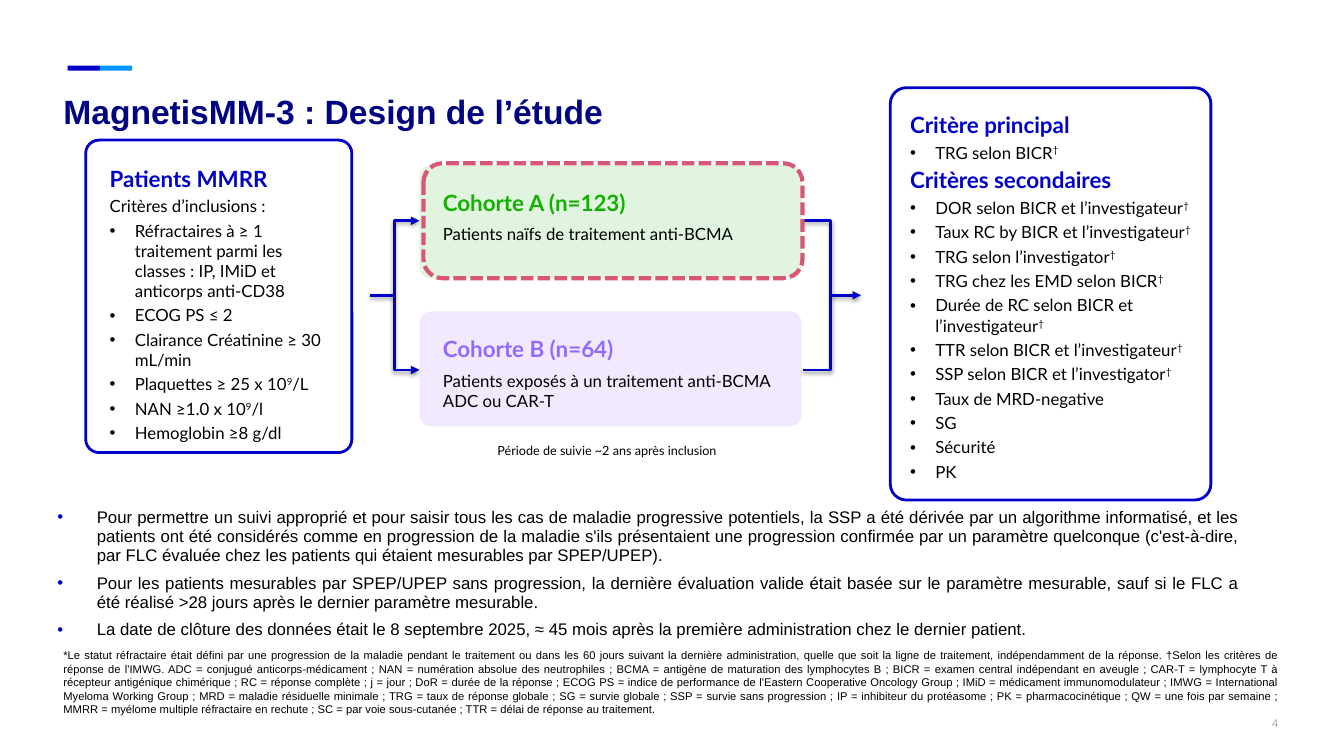
from lxml.etree import SubElement
from pptx import Presentation
from pptx.dml.color import RGBColor
from pptx.enum.dml import MSO_LINE
from pptx.enum.shapes import MSO_CONNECTOR, MSO_SHAPE
from pptx.enum.text import MSO_ANCHOR, PP_ALIGN
from pptx.oxml.ns import qn
from pptx.util import Inches, Pt

BLUE = RGBColor(0x00, 0x00, 0xC9)
SKY = RGBColor(0x00, 0x95, 0xFF)
NAVY = RGBColor(0x00, 0x04, 0x83)
GREY = RGBColor(0xA1, 0xAA, 0xB1)
BLACK = RGBColor(0x00, 0x00, 0x00)
WHITE = RGBColor(0xFF, 0xFF, 0xFF)
GREEN = RGBColor(0x12, 0xB0, 0x00)
MINT = RGBColor(0xE1, 0xF4, 0xDF)
VIOLET = RGBColor(0x93, 0x69, 0xFF)
LILAC = RGBColor(0xF3, 0xE9, 0xFF)
ROSE = RGBColor(0xD9, 0x57, 0x76)

PATIENTS = [
    "Réfractaires à ≥ 1 traitement parmi les classes : IP, IMiD et anticorps anti-CD38",
    "ECOG PS ≤ 2",
    "Clairance Créatinine ≥ 30 mL/min",
    "Plaquettes ≥ 25 x 10^9^/L",
    "NAN ≥1.0 x 10^9^/l",
    "Hemoglobin ≥8 g/dl",
]
SECOND = [
    "DOR selon BICR et l’investigateur^†",
    "Taux RC by BICR et l’investigateur^†",
    "TRG selon l’investigator^†",
    "TRG chez les EMD selon BICR^†",
    "Durée de RC selon BICR et l’investigateur^†",
    "TTR selon BICR et l’investigateur^†",
    "SSP selon BICR et l’investigator^†",
    "Taux de MRD-negative",
    "SG",
    "Sécurité",
    "PK",
]
NOTES = [
    "Pour permettre un suivi approprié et pour saisir tous les cas de maladie progressive potentiels, la SSP a été dérivée par un algorithme informatisé, et les patients ont été considérés comme en progression de la maladie s'ils présentaient une progression confirmée par un paramètre quelconque (c'est-à-dire, par FLC évaluée chez les patients qui étaient mesurables par SPEP/UPEP).",
    "Pour les patients mesurables par SPEP/UPEP sans progression, la dernière évaluation valide était basée sur le paramètre mesurable, sauf si le FLC a été réalisé >28 jours après le dernier paramètre mesurable.",
    "La date de clôture des données était le 8 septembre 2025, ≈ 45 mois après la première administration chez le dernier patient.",
]
STATUS = "*Le statut réfractaire était défini par une progression de la maladie pendant le traitement ou dans les 60 jours suivant la dernière administration, quelle que soit la ligne de traitement, indépendamment de la réponse. †Selon les critères de réponse de l'IMWG."
TERMS = [
    "ADC = conjugué anticorps-médicament",
    "NAN = numération absolue des neutrophiles",
    "BCMA = antigène de maturation des lymphocytes B",
    "BICR = examen central indépendant en aveugle",
    "CAR-T = lymphocyte T à récepteur antigénique chimérique",
    "RC = réponse complète",
    "j = jour",
    "DoR = durée de la réponse",
    "ECOG PS = indice de performance de l'Eastern Cooperative Oncology Group",
    "IMiD = médicament immunomodulateur",
    "IMWG = International Myeloma Working Group",
    "MRD = maladie résiduelle minimale",
    "TRG = taux de réponse globale",
    "SG = survie globale",
    "SSP = survie sans progression",
    "IP = inhibiteur du protéasome",
    "PK = pharmacocinétique",
    "QW = une fois par semaine",
    "MMRR = myélome multiple réfractaire en rechute",
    "SC = par voie sous-cutanée",
    "TTR = délai de réponse au traitement.",
]


def setup(shape, pads, anchor=MSO_ANCHOR.TOP):
    frame = shape.text_frame
    frame.word_wrap = True
    frame.vertical_anchor = anchor
    (frame.margin_left, frame.margin_top,
     frame.margin_right, frame.margin_bottom) = map(Inches, pads)
    return frame


def write(frame, text, size, color=BLACK, font="Lato", bold=False,
          align=PP_ALIGN.LEFT, after=0, indent=0, dot=None):
    para = frame.paragraphs[0]
    if para.runs:
        para = frame.add_paragraph()
    para.alignment = align
    para.space_after = Pt(after)
    if indent:
        props = para._p.get_or_add_pPr()
        props.set("marL", str(Inches(indent)))
        props.set("indent", str(-Inches(indent)))
        if dot:
            tint = SubElement(props, qn("a:buClr"))
            SubElement(tint, qn("a:srgbClr"), val=str(dot))
        SubElement(props, qn("a:buFont"), typeface="Arial")
        SubElement(props, qn("a:buChar"), char="•")
    para.font.name = font
    para.font.size = Pt(size)
    para.font.bold = bold
    para.font.color.rgb = color
    for i, part in enumerate(text.split("^")):
        if part:
            run = para.add_run()
            run.text = part
            if i % 2:
                run._r.get_or_add_rPr().set("baseline", "30000")
    return para


def label(slide, box, text, size, pads=(0.1, 0.05, 0.1, 0.05),
          anchor=MSO_ANCHOR.TOP, **style):
    shape = slide.shapes.add_textbox(*map(Inches, box))
    write(setup(shape, pads, anchor), text, size, **style)


def block(slide, kind, box, fill=None, line=None, width=2, round=None):
    shape = slide.shapes.add_shape(kind, *map(Inches, box))
    shape.shadow.inherit = False
    if round is not None:
        shape.adjustments[0] = round
    if fill is None:
        shape.fill.background()
    else:
        shape.fill.solid()
        shape.fill.fore_color.rgb = fill
    if line is None:
        shape.line.fill.background()
    else:
        shape.line.color.rgb = line
        shape.line.width = Pt(width)
    return shape


def header(slide, box):
    x, y, w, h = box
    for i, color in enumerate((BLUE, SKY)):
        block(slide, MSO_SHAPE.RECTANGLE,
              (x + 0.14 + i * 0.32, y, 0.32, 0.05), color)
    label(slide, (x, y + 0.15, w, h - 0.15), "MagnetisMM-3 : Design de l’étude",
          24, (0.1,) * 4, color=NAVY, font="Arial", bold=True)


def panel(slide, box, pads, rows):
    shape = block(slide, MSO_SHAPE.ROUNDED_RECTANGLE, box, WHITE, BLUE, round=0.05)
    tint = shape._element.spPr.find(qn("a:solidFill"))[0]
    SubElement(tint, qn("a:alpha"), val="10000")
    frame = setup(shape, pads, MSO_ANCHOR.MIDDLE)
    for kind, text in rows:
        if kind == "head":
            write(frame, text, 16, BLUE, bold=True, after=3)
        else:
            write(frame, text, 12, after=3, indent=0.25 if kind == "item" else 0)


def cohort(slide, box, fill, color, name, text):
    shape = block(slide, MSO_SHAPE.ROUNDED_RECTANGLE, box, fill, round=0.1)
    frame = setup(shape, (0.2, 0.2, 0.2, 0.05))
    write(frame, name, 16, color, bold=True, after=6)
    write(frame, text, 12)


def trace(slide, points, ends=()):
    points = [(Inches(x), Inches(y)) for x, y in points]
    if len(points) == 2:
        shape = slide.shapes.add_connector(MSO_CONNECTOR.STRAIGHT,
                                           *points[0], *points[1])
    else:
        draft = slide.shapes.build_freeform(*points[0])
        draft.add_line_segments(points[1:], close=False)
        shape = draft.convert_to_shape()
        shape.fill.background()
    shape.line.color.rgb = BLUE
    shape.line.width = Pt(2)
    for end in ends:
        SubElement(shape._element.spPr.find(qn("a:ln")), qn("a:" + end), type="triangle")
    effect = SubElement(shape._element.spPr, qn("a:effectLst"))
    shade = SubElement(effect, qn("a:outerShdw"), blurRad=str(Pt(3.1)),
                       dist=str(Pt(1.6)), dir="5400000", rotWithShape="0")
    tint = SubElement(shade, qn("a:srgbClr"), val=str(BLACK))
    SubElement(tint, qn("a:alpha"), val="38000")


def flow(slide, box):
    x, y, w, h = box
    left, right = x + 0.49, x + 4.29
    top, low = y + 0.57, y + 2.05
    mid = (top + low) / 2
    cohort(slide, (left, y + 0.02, 3.79, 1.12), MINT, GREEN,
           "Cohorte A (n=123)", "Patients naïfs de traitement anti-BCMA")
    cohort(slide, (left, y + 1.47, 3.79, 1.14), LILAC, VIOLET, "Cohorte B (n=64)",
           "Patients exposés à un traitement anti-BCMA ADC ou CAR-T")
    fork, join = x + 0.24, x + 4.57
    trace(slide, [(left, top), (fork, top), (fork, low), (left, low)],
          ("headEnd", "tailEnd"))
    trace(slide, [(right, top), (join, top), (join, low), (right, low)])
    trace(slide, [(x, mid), (fork, mid)])
    trace(slide, [(join, mid), (x + w, mid)], ("tailEnd",))
    frame = block(slide, MSO_SHAPE.ROUNDED_RECTANGLE,
                  (left + 0.04, y, 3.76, 1.14), line=ROSE, width=3)
    frame.line.dash_style = MSO_LINE.SQUARE_DOT
    label(slide, (fork, y + h - 0.25, 4.22, 0.25),
          "Période de suivie ~2 ans après inclusion", 9, align=PP_ALIGN.CENTER)


def remarks(slide, box):
    shape = slide.shapes.add_textbox(*map(Inches, box))
    frame = setup(shape, (0.04,) * 4)
    for i, text in enumerate(NOTES):
        para = write(frame, text, 12, font="Arial", align=PP_ALIGN.JUSTIFY,
                     indent=0.39, dot=BLUE)
        para.line_spacing = 0.95
        if i:
            para.space_before = Pt(5.9)


def footer(slide, box):
    x, y, w, h = box
    label(slide, (x, y, w, 0.77), STATUS + " " + " ; ".join(TERMS), 8,
          anchor=MSO_ANCHOR.BOTTOM, font="Arial", align=PP_ALIGN.JUSTIFY)
    label(slide, (x + w - 0.79, y + h - 0.57, 0.8, 0.57), "4", 8, (0.13,) * 4,
          MSO_ANCHOR.MIDDLE, color=GREY, font="Arial", align=PP_ALIGN.RIGHT)


def main():
    deck = Presentation()
    deck.slide_width, deck.slide_height = Inches(13.33), Inches(7.5)
    slide = deck.slides.add_slide(deck.slide_layouts[6])
    header(slide, (0.53, 0.65, 11.5, 0.76))
    panel(slide, (0.85, 1.39, 2.64, 3.1), (0.2, 0.2, 0.24, 0.05),
          [("head", "Patients MMRR"), ("text", "Critères d’inclusions :")]
          + [("item", text) for text in PATIENTS])
    panel(slide, (8.83, 0.87, 3.18, 4.09), (0.15, 0.1, 0.1, 0.05),
          [("head", "Critère principal"), ("item", "TRG selon BICR^†"),
           ("head", "Critères secondaires")] + [("item", text) for text in SECOND])
    flow(slide, (3.67, 1.62, 4.87, 2.97))
    remarks(slide, (0.53, 5, 11.81, 1.4))
    footer(slide, (0.53, 6.38, 12.27, 1.08))
    deck.save("out.pptx")


if __name__ == "__main__":
    main()
